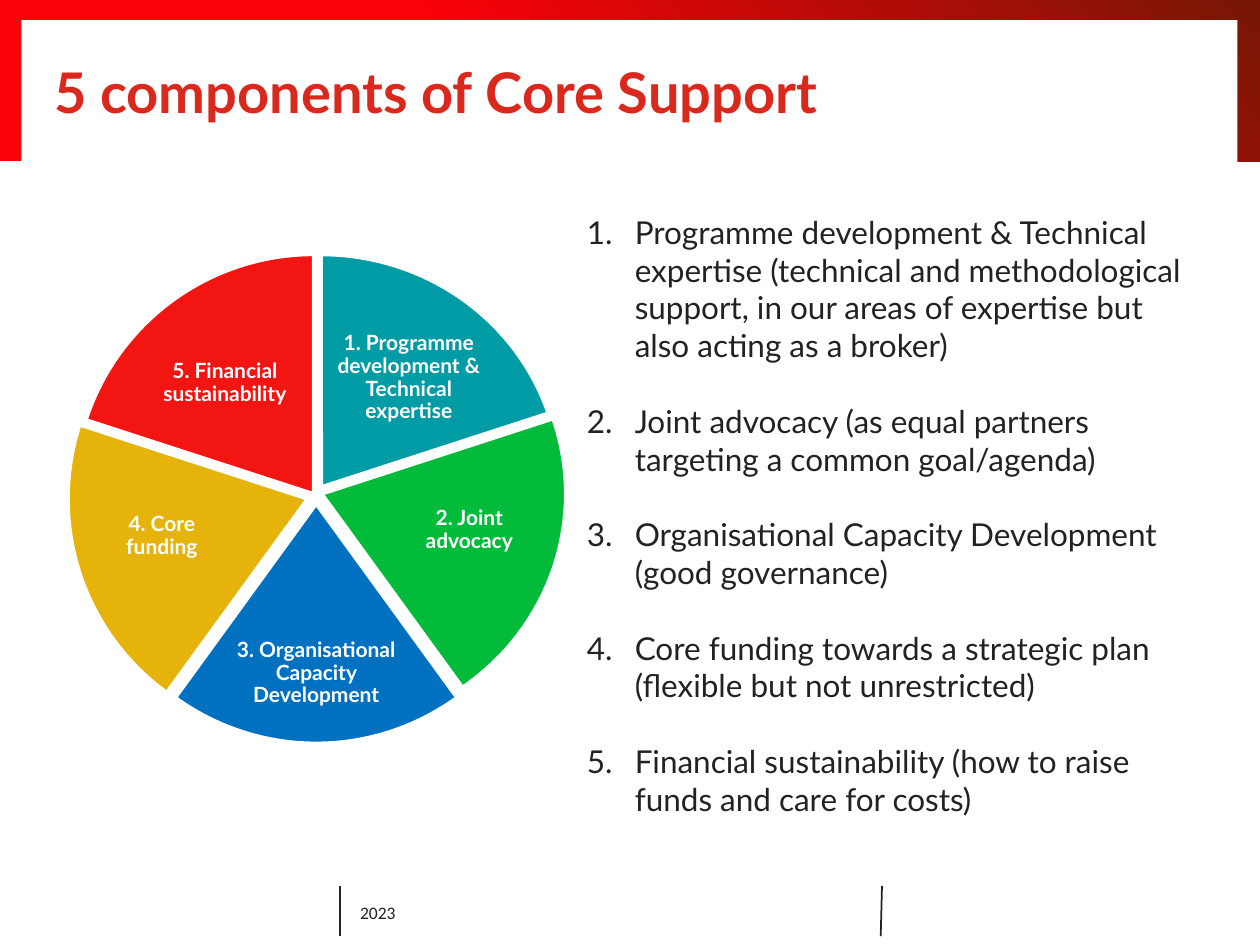
"""Build the slide on the five components of core support."""
from dataclasses import dataclass
from typing import Any

from lxml import etree
from pptx import Presentation
from pptx import util as u
from pptx.dml.color import RGBColor
from pptx.enum import shapes, text
from pptx.oxml import ns

WHITE = RGBColor(0xFF, 0xFF, 0xFF)
INK = RGBColor(0x22, 0x22, 0x21)
TITLE_RED = RGBColor(0xDA, 0x29, 0x1C)
BAND_RED = RGBColor(0xFA, 0x00, 0x07)
BAND_DARK = RGBColor(0x76, 0x17, 0x06)
TEAL = RGBColor(0x00, 0x9C, 0xA6)
GREEN = RGBColor(0x02, 0xBB, 0x3A)
BLUE = RGBColor(0x00, 0x70, 0xC0)
GOLD = RGBColor(0xE5, 0xB3, 0x09)
RED = RGBColor(0xF3, 0x15, 0x12)

PIE_START = 162
PIE_STEP = 43.2
FULL_TURN = 216

COMPONENTS = [
    ("1. Programme development & Technical expertise", TEAL,
     (0.65, 2.02, 3.8, 3.69), (2.6, 2.57, 1.29, 0.86)),
    ("2. Joint advocacy", GREEN,
     (0.62, 2.04, 3.87, 3.76), (3.15, 3.74, 1.15, 0.94)),
    ("3. Organisational Capacity Development", BLUE,
     (0.61, 2.1, 3.8, 3.8), (1.83, 4.94, 1.36, 0.81)),
    ("4. Core funding", GOLD,
     (0.54, 2.06, 3.8, 3.8), (0.72, 3.78, 1.13, 0.95)),
    ("5. Financial sustainability", RED,
     (0.59, 2.02, 3.8, 3.8), (1.14, 2.6, 1.29, 0.88)),
]
EXPLANATIONS = [
    "Programme development & Technical expertise (technical and methodological "
    "support, in our areas of expertise but also acting as a broker)",
    "Joint advocacy (as equal partners targeting a common goal/agenda)",
    "Organisational Capacity Development (good governance)",
    "Core funding towards a strategic plan (flexible but not unrestricted)",
    "Financial sustainability (how to raise funds and care for costs)",
]


def apply(target, values):
    for name, value in values.items():
        setattr(target, name, value)


@dataclass
class SlideBuilder:
    slide: Any
    font: str = "Lato"

    def box(self, kind, at, color=None, line=None):
        shape = self.slide.shapes.add_shape(kind, *map(u.Inches, at))
        shape.shadow.inherit = False
        if color is not None:
            shape.fill.solid()
            shape.fill.fore_color.rgb = color
        if line is None:
            shape.line.fill.background()
        else:
            shape.line.color.rgb = line
            shape.line.width = u.Pt(2)
        return shape

    def gradient_band(self, at, stops, angle):
        fill = self.box(shapes.MSO_SHAPE.RECTANGLE, at).fill
        fill.gradient()
        fill.gradient_angle = angle
        for stop, (position, color) in zip(fill.gradient_stops, stops):
            stop.position = position
            stop.color.rgb = color

    def slice(self, at, color, index):
        shape = self.box(shapes.MSO_SHAPE.PIE, at, color, WHITE)
        for edge in range(2):
            shape.adjustments[edge] = (PIE_START + (index + edge) * PIE_STEP) % FULL_TURN

    def divider(self, start, end):
        points = map(u.Inches, (*start, *end))
        line = self.slide.shapes.add_connector(shapes.MSO_CONNECTOR.STRAIGHT, *points)
        line.line.color.rgb = INK
        line.line.width = u.Pt(1)
        etree.SubElement(line._element.spPr, ns.qn("a:effectLst"))

    def text(self, at, lines, color, font, margin=None, numbered=False,
             anchor=text.MSO_ANCHOR.MIDDLE, **layout):
        frame = self.slide.shapes.add_textbox(*map(u.Inches, at)).text_frame
        apply(frame, {"word_wrap": True, "vertical_anchor": anchor})
        if margin is not None:
            sides = ("left", "top", "right", "bottom")
            apply(frame, {f"margin_{side}": u.Inches(margin) for side in sides})
        for index, line in enumerate(lines):
            paragraph = frame.add_paragraph() if index else frame.paragraphs[0]
            apply(paragraph, layout)
            if numbered:
                self.number(paragraph)
                if index:
                    paragraph.space_before = u.Pt(21.6)
            run = paragraph.add_run()
            run.text = line
            apply(run.font, {"name": self.font, **font})
            run.font.color.rgb = color

    def number(self, paragraph):
        properties = paragraph._p.get_or_add_pPr()
        indent = u.Inches(0.38)
        properties.set("marL", str(indent))
        properties.set("indent", str(-indent))
        etree.SubElement(properties, ns.qn("a:buFont"), typeface="+mj-lt")
        etree.SubElement(properties, ns.qn("a:buAutoNum"), type="arabicPeriod")


def main():
    presentation = Presentation()
    presentation.slide_width = u.Inches(10)
    presentation.slide_height = u.Inches(7.5)
    builder = SlideBuilder(presentation.slides.add_slide(presentation.slide_layouts[6]))

    builder.gradient_band((0, 0, 10, 1.28), [(0.4, BAND_RED), (1, BAND_DARK)], 45)
    builder.box(shapes.MSO_SHAPE.RECTANGLE, (0.17, 0.16, 9.65, 1.18), WHITE)
    builder.divider((2.7, 7.03), (2.7, 7.43))
    builder.divider((7, 7.03), (6.99, 7.43))
    builder.text((0.43, 0.45, 9.06, 0.55), ["5 components of Core Support"], TITLE_RED,
                 {"size": u.Pt(32), "bold": True}, margin=0)

    for index, (label, color, slice_at, label_at) in enumerate(COMPONENTS):
        builder.slice(slice_at, color, index)
        builder.text(label_at, [label], WHITE, {"size": u.Pt(12), "bold": True},
                     margin=0.02, alignment=text.PP_ALIGN.CENTER, line_spacing=0.9)

    builder.text((4.56, 1.64, 5, 5.25), EXPLANATIONS, INK, {"size": u.Pt(18)},
                 numbered=True, anchor=text.MSO_ANCHOR.TOP)
    builder.text((2.76, 7.04, 4.18, 0.4), ["2023"], INK,
                 {"size": u.Pt(10), "name": "Calibri"})
    presentation.save("out.pptx")


if __name__ == "__main__":
    main()
